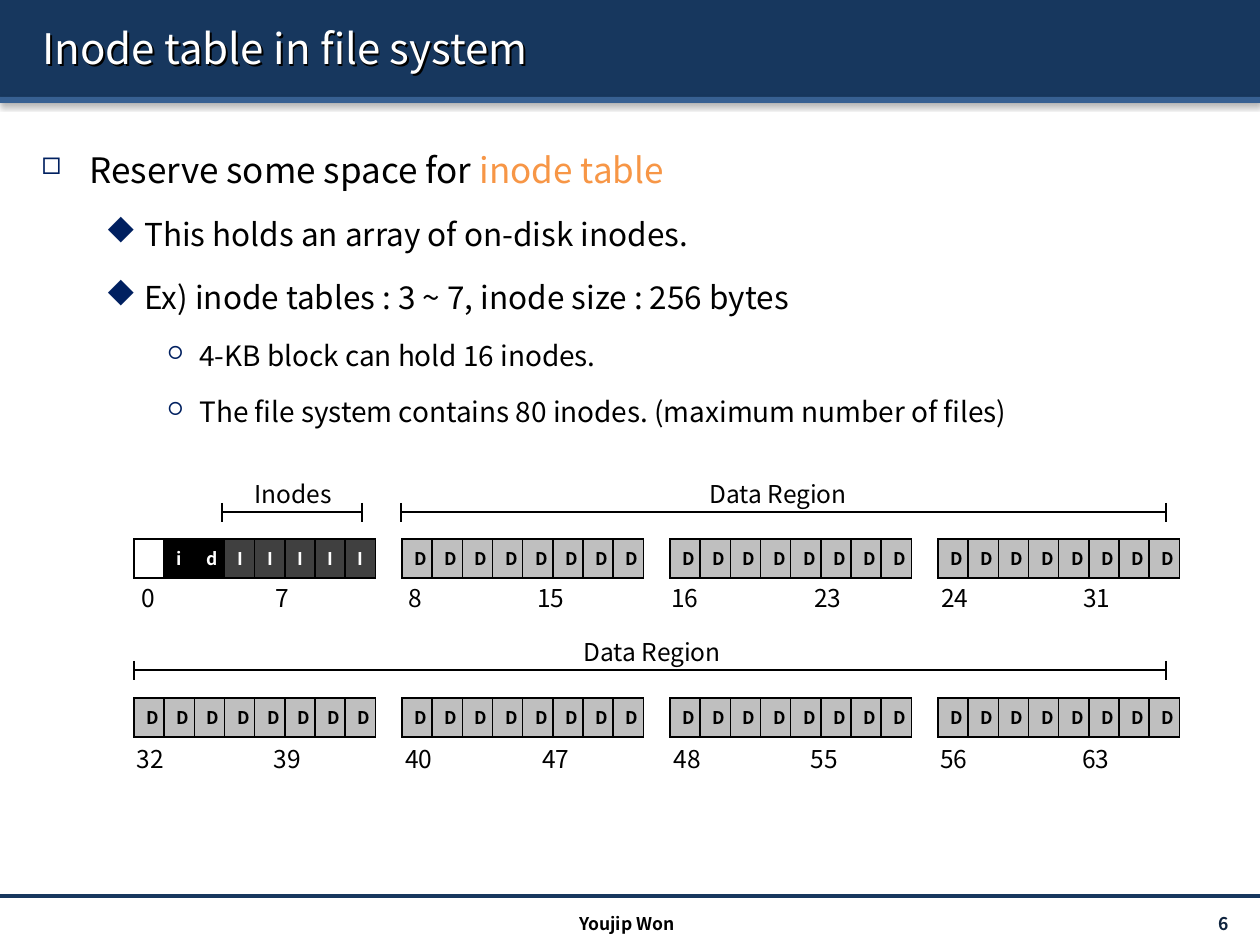
import dataclasses

import lxml.etree
import pptx
import pptx.dml.color
import pptx.enum.shapes
import pptx.enum.text
import pptx.oxml.ns
import pptx.util

EMU_PER_PX = 914400 // 126
ALIGN = pptx.enum.text.PP_ALIGN
ANCHOR = pptx.enum.text.MSO_ANCHOR


@dataclasses.dataclass(frozen=True)
class Theme:
    font: str = "Noto Sans CJK KR"
    bullet_font: str = "Wingdings"
    banner: str = "17375E"
    stripe: str = "376092"
    bullet: str = "002060"
    accent: str = "F79646"
    page_number: str = "0F243E"
    inode: str = "404040"
    data: str = "BFBFBF"
    black: str = "000000"
    white: str = "FFFFFF"
    title_size: int = 24
    body_sizes: tuple = (20, 18, 16)
    label_size: int = 14
    small_size: int = 10


# Wingdings codes for ◻, ⬥ and ○, size in percent, text indent, hanging indent
BULLETS = (("¨", 65, 48, 48), ("u", 100, 103, 39), ("¡", 65, 158, 32))


def px(length):
    return pptx.util.Emu(length * EMU_PER_PX)


def rgb(color):
    return pptx.dml.color.RGBColor.from_string(color)


def add_xml(parent, tag, **attributes):
    child = lxml.etree.SubElement(parent, pptx.oxml.ns.qn(tag))
    for key, value in attributes.items():
        child.set(key, str(value))
    return child


def add_shadow(effects, alpha, blur, distance, direction):
    """Append an outer shadow; blur and distance are in points."""
    shadow = add_xml(effects, "a:outerShdw", blurRad=int(blur * 12700),
                     dist=int(distance * 12700), dir=direction * 60000,
                     algn="ctr", rotWithShape=0)
    color = add_xml(shadow, "a:srgbClr", val="000000")
    add_xml(color, "a:alpha", val=alpha * 1000)


class Deck:
    def __init__(self, theme):
        self.theme = theme
        self.presentation = pptx.Presentation()
        self.presentation.slide_width = px(1260)
        self.presentation.slide_height = px(945)
        self.slide = self.presentation.slides.add_slide(
            self.presentation.slide_layouts[6])

    def style(self, run, size, color, bold=False):
        run.font.name = self.theme.font
        run.font.size = pptx.util.Pt(size)
        run.font.bold = bold
        run.font.color.rgb = rgb(color)

    def bar(self, top, height, color):
        bar = self.slide.shapes.add_shape(
            pptx.enum.shapes.MSO_SHAPE.RECTANGLE,
            px(0), px(top), px(1260), px(height))
        bar.fill.solid()
        bar.fill.fore_color.rgb = rgb(color)
        bar.line.fill.background()
        bar.shadow.inherit = False
        effects = bar._element.spPr.find(pptx.oxml.ns.qn("a:effectLst"))
        add_shadow(effects, 38, 3.1, 1.6, 90)

    def line(self, x1, y1, x2, y2, color, width):
        line = self.slide.shapes.add_connector(
            pptx.enum.shapes.MSO_CONNECTOR.STRAIGHT,
            px(x1), px(y1), px(x2), px(y2))
        line.line.color.rgb = rgb(color)
        line.line.width = pptx.util.Pt(width)
        add_xml(line._element.spPr, "a:effectLst")

    def box(self, left, top, width, height, anchor=ANCHOR.TOP):
        box = self.slide.shapes.add_textbox(
            px(left), px(top), px(width), px(height))
        box.text_frame.word_wrap = True
        box.text_frame.vertical_anchor = anchor
        return box

    def text(self, words, place, size, color, bold=False, align=ALIGN.LEFT,
             anchor=ANCHOR.TOP):
        box = self.box(*place, anchor)
        box.text_frame.text = words
        paragraph = box.text_frame.paragraphs[0]
        paragraph.alignment = align
        self.style(paragraph.runs[0], size, color, bold)
        return box

    def title(self, words):
        """Write the heading; the unfilled box casts its shadow from the text."""
        box = self.text(words, (30, 7, 1211, 81), self.theme.title_size,
                        self.theme.white, anchor=ANCHOR.MIDDLE)
        add_shadow(add_xml(box._element.spPr, "a:effectLst"), 100, 0, 1.5, 45)

    def outline(self, items):
        """Write bulleted paragraphs from (level, [(words, color), ...])."""
        frame = self.box(29, 121, 1211, 759).text_frame
        for index, (level, parts) in enumerate(items):
            paragraph = frame.add_paragraph() if index else frame.paragraphs[0]
            paragraph.level = level
            paragraph.line_spacing = 1.5
            self.bullet(paragraph, level, spaced=index > 0)
            for words, color in parts:
                run = paragraph.add_run()
                run.text = words
                self.style(run, self.theme.body_sizes[level], color)

    def bullet(self, paragraph, level, spaced):
        character, percent, indent, hanging = BULLETS[level]
        properties = paragraph._p.get_or_add_pPr()
        properties.set("marL", str(px(indent)))
        properties.set("indent", str(-px(hanging)))
        if spaced:
            add_xml(add_xml(properties, "a:spcBef"), "a:spcPct", val=20000)
        add_xml(add_xml(properties, "a:buClr"), "a:srgbClr", val=self.theme.bullet)
        add_xml(properties, "a:buSzPct", val=percent * 1000)
        add_xml(properties, "a:buFont", typeface=self.theme.bullet_font,
                pitchFamily=2, charset=2)
        add_xml(properties, "a:buChar", char=character)

    def blocks(self, left, top, cells):
        """Draw a one-row table of (letter, fill, text color) disk blocks."""
        table = self.slide.shapes.add_table(
            1, len(cells), px(left), px(top), px(229), px(39)).table
        table.first_row = table.horz_banding = False
        for cell, (letter, fill, color) in zip(table.rows[0].cells, cells):
            properties = cell._tc.get_or_add_tcPr()
            for side in ("a:lnL", "a:lnR", "a:lnT", "a:lnB"):
                border = add_xml(properties, side, w=12700)
                add_xml(add_xml(border, "a:solidFill"), "a:srgbClr",
                        val=self.theme.black)
            cell.fill.solid()
            cell.fill.fore_color.rgb = rgb(fill)
            paragraph = cell.text_frame.paragraphs[0]
            paragraph.alignment = ALIGN.CENTER
            if letter:
                paragraph.text = letter
                self.style(paragraph.runs[0], self.theme.small_size, color, True)
            else:
                add_xml(paragraph._p, "a:endParaRPr",
                        sz=self.theme.small_size * 100)

    def block_range(self, first, last, left, top, tab):
        box = self.text(f"{first}\t{last}", (left, top, 260, 43),
                        self.theme.label_size, self.theme.black)
        properties = box.text_frame.paragraphs[0]._p.get_or_add_pPr()
        add_xml(add_xml(properties, "a:tabLst"), "a:tab", pos=px(tab), algn="l")

    def bracket(self, words, left, right, top, label_left, label_width):
        for x in (left, right):
            self.line(x, top, x, top + 19, self.theme.black, 1)
        self.line(right, top + 9, left, top + 9, self.theme.black, 1)
        self.text(words, (label_left, top - 30, label_width, 43),
                  self.theme.label_size, self.theme.black)


def main():
    theme = Theme()
    deck = Deck(theme)
    deck.bar(0, 97, theme.banner)
    deck.bar(97, 6, theme.stripe)
    deck.line(0, 896, 1260, 896, theme.banner, 2)
    deck.title("Inode table in file system")
    deck.outline([
        (0, [("Reserve some space for ", theme.black),
             ("inode table", theme.accent)]),
        (1, [("This holds an array of on-disk inodes.", theme.black)]),
        (1, [("Ex) inode tables : 3 ~ 7, inode size : 256 bytes", theme.black)]),
        (2, [("4-KB block can hold 16 inodes.", theme.black)]),
        (2, [("The file system contains 80 inodes. (maximum number of files)",
              theme.black)]),
    ])
    deck.text("6", (1094, 908, 147, 30), theme.small_size, theme.page_number,
              True, ALIGN.RIGHT, ANCHOR.MIDDLE)
    deck.text("Youjip Won", (418, 907, 418, 30), theme.small_size, theme.black,
              True, ALIGN.CENTER)

    data_cells = [("D", theme.data, theme.black)] * 8
    inode_cells = ([("", theme.white, theme.black)]
                   + [(letter, theme.black, theme.white) for letter in "id"]
                   + [("I", theme.inode, theme.white)] * 5)
    # block top, label top, then (label left, tab) of each group
    disk_rows = (
        (539, 577, ((129, 134), (396, 129), (659, 143), (929, 142))),
        (698, 738, ((124, 137), (393, 137), (661, 137), (928, 142))),
    )
    for row, (block_top, label_top, labels) in enumerate(disk_rows):
        for column, (label_left, tab) in enumerate(labels):
            first = (row * 4 + column) * 8
            deck.blocks(134 + 268 * column, block_top,
                        data_cells if first else inode_cells)
            deck.block_range(first, first + 7, label_left, label_top, tab)

    deck.bracket("Inodes", 222, 362, 503, 242, 106)
    deck.bracket("Data Region", 401, 1166, 503, 697, 171)
    deck.bracket("Data Region", 134, 1166, 661, 571, 171)
    deck.presentation.save("out.pptx")


if __name__ == "__main__":
    main()
